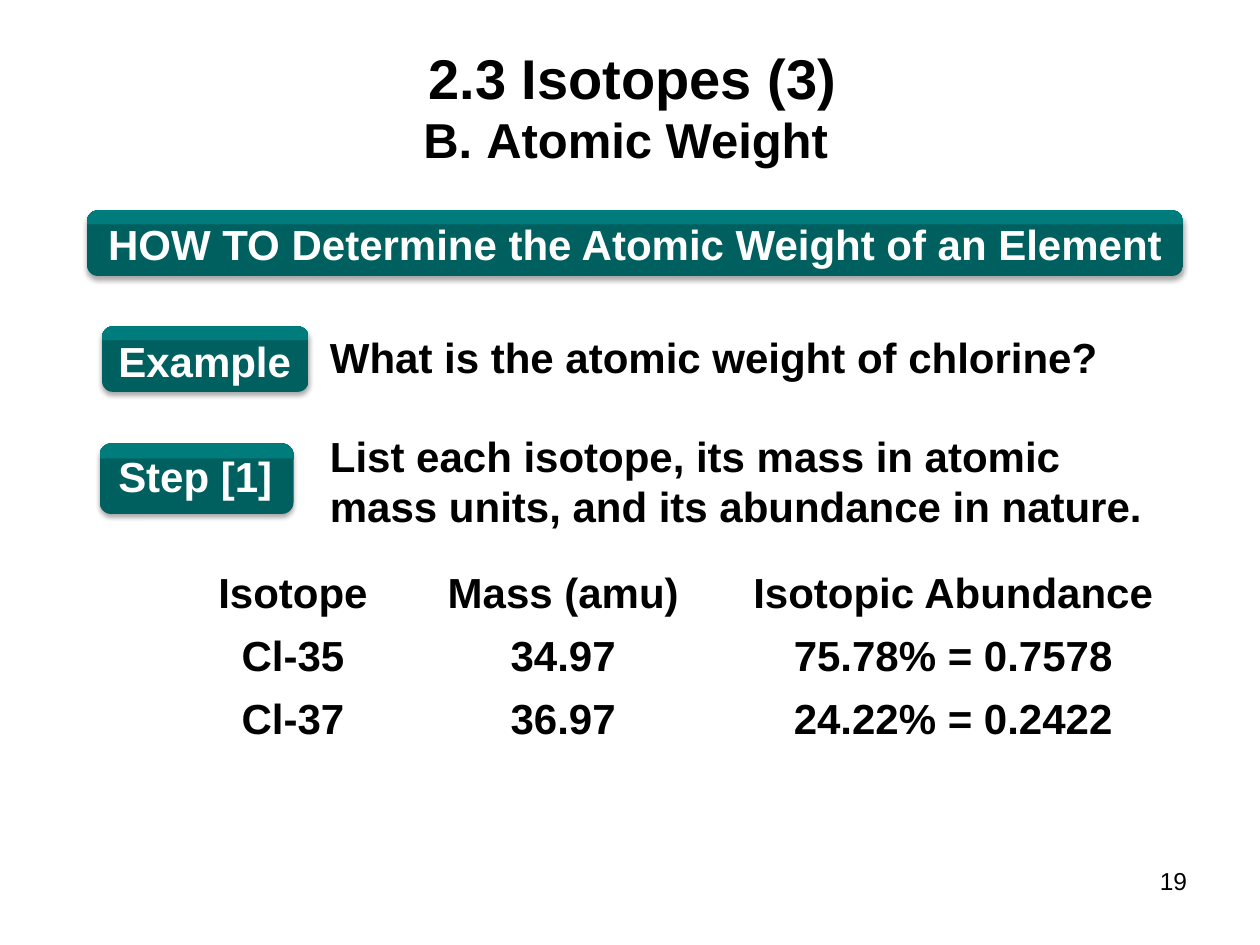
from lxml import etree
from pptx import Presentation
from pptx.dml.color import RGBColor
from pptx.enum.shapes import MSO_SHAPE
from pptx.enum.text import MSO_ANCHOR as ANCHOR, PP_ALIGN as ALIGN
from pptx.oxml import parse_xml
from pptx.oxml.ns import nsdecls, qn
from pptx.util import Inches, Pt

THEME = {
    "font": "Arial",
    "ink": "000000", "light": "FFFFFF",
    "title": 32, "subtitle": 28, "body": 24, "number": 14,
    "gradient": [(78, "006060"), (80, "007C7C"), (100, "007D7D")],
}

# left, top, width, height in inches
BANNERS = [
    (0.69, 1.67, 8.7, 0.52),
    (0.81, 2.59, 1.64, 0.52),
    (0.79, 3.52, 1.54, 0.56),
]

# text, box, size, colour, alignment, anchor, bold, wrap
L, C, R = ALIGN.LEFT, ALIGN.CENTER, ALIGN.RIGHT
TOP, MID = ANCHOR.TOP, ANCHOR.MIDDLE
PAGE_NUMBER = ("19", (8.01, 6.82, 1.51, 0.34), "number", "ink", R, MID, False, True)
TITLE = ("2.3 Isotopes (3)", (2.92, 0.33, 4.2, 0.57), "title", "ink", C, MID, True, True)
SUBTITLE = ("Atomic Weight", (2.82, 0.82, 4.29, 0.57), "subtitle", "ink", C, MID, True, True)
BODY = [
    ("HOW TO Determine the Atomic Weight of an Element",
     (0.76, 1.72, 8.57, 0.42), "body", "light", L, MID, True, False),
    ("Example", (0.81, 2.61, 1.63, 0.49), "body", "light", C, TOP, True, True),
    ("What is the atomic weight of chlorine?",
     (2.52, 2.58, 6.42, 0.52), "body", "ink", L, TOP, True, True),
    ("Step [1]", (0.81, 3.53, 1.48, 0.51), "body", "light", C, TOP, True, True),
    ("List each isotope, its mass in atomic mass units, and its abundance in nature.",
     (2.52, 3.44, 6.92, 0.75), "body", "ink", L, MID, True, True),
]

ISOTOPES = [
    ("Isotope", "Mass (amu)", "Isotopic Abundance"),
    ("Cl-35", "34.97", "75.78% = 0.7578"),
    ("Cl-37", "36.97", "24.22% = 0.2422"),
]
TABLE_AT = (1.36, 4.46)
COL_WIDTHS = (1.93, 2.36, 3.83)
ROW_HEIGHT = 0.41


def inches(box):
    return [Inches(v) for v in box]


def style(p, size, colour, align, bold):
    p.alignment = align
    for r in p.runs:
        r.font.name = THEME["font"]
        r.font.size = Pt(THEME[size])
        r.font.bold = bold
        r.font.color.rgb = RGBColor.from_string(THEME[colour])


def add_text(slide, text, box, size, colour, align, anchor, bold, wrap):
    tf = slide.shapes.add_textbox(*inches(box)).text_frame
    tf.word_wrap = wrap
    tf.vertical_anchor = anchor
    tf.text = text
    p = tf.paragraphs[0]
    style(p, size, colour, align, bold)
    return p


def number_paragraph(p, start):
    """Give a paragraph a capital-letter number with a hanging indent."""
    pPr = p._p.get_or_add_pPr()
    pPr.set("marL", str(Inches(0.5)))
    pPr.set("indent", str(-Inches(0.5)))
    etree.SubElement(pPr, qn("a:buAutoNum"), type="alphaUcPeriod", startAt=str(start))


def add_banner(slide, box):
    """Add a rounded bar with a bottom-to-top gradient and a soft shadow."""
    sp = slide.shapes.add_shape(MSO_SHAPE.ROUNDED_RECTANGLE, *inches(box))
    sp.line.fill.background()
    stops = "".join(
        f'<a:gs pos="{pos * 1000}"><a:srgbClr val="{colour}"/></a:gs>'
        for pos, colour in THEME["gradient"])
    spPr = sp._element.spPr
    spPr.find(qn("a:prstGeom")).addnext(parse_xml(
        f'<a:gradFill {nsdecls("a")} rotWithShape="1"><a:gsLst>{stops}</a:gsLst>'
        '<a:lin ang="16200000" scaled="0"/></a:gradFill>'))
    spPr.append(parse_xml(
        f'<a:effectLst {nsdecls("a")}>'
        f'<a:outerShdw blurRad="{Pt(3.1)}" dist="{Pt(1.8)}" dir="5400000" rotWithShape="0">'
        '<a:srgbClr val="000000"><a:alpha val="35000"/></a:srgbClr>'
        '</a:outerShdw></a:effectLst>'))


def add_isotope_table(slide):
    size = (sum(COL_WIDTHS), ROW_HEIGHT * len(ISOTOPES))
    table = slide.shapes.add_table(
        len(ISOTOPES), len(COL_WIDTHS), *inches(TABLE_AT + size)).table
    table.first_row = table.horz_banding = False
    for col, width in zip(table.columns, COL_WIDTHS):
        col.width = Inches(width)
    for row, values in zip(table.rows, ISOTOPES):
        for cell, value in zip(row.cells, values):
            cell.fill.background()
            cell.vertical_anchor = MID
            cell.text = value
            style(cell.text_frame.paragraphs[0], "body", "ink", C, True)


def main():
    prs = Presentation()
    prs.slide_width, prs.slide_height = Inches(10), Inches(7.5)
    slide = prs.slides.add_slide(prs.slide_layouts[6])
    add_text(slide, *PAGE_NUMBER)
    for box in BANNERS:
        add_banner(slide, box)
    add_text(slide, *TITLE)
    number_paragraph(add_text(slide, *SUBTITLE), start=2)
    for item in BODY:
        add_text(slide, *item)
    add_isotope_table(slide)
    prs.save("out.pptx")


if __name__ == "__main__":
    main()
